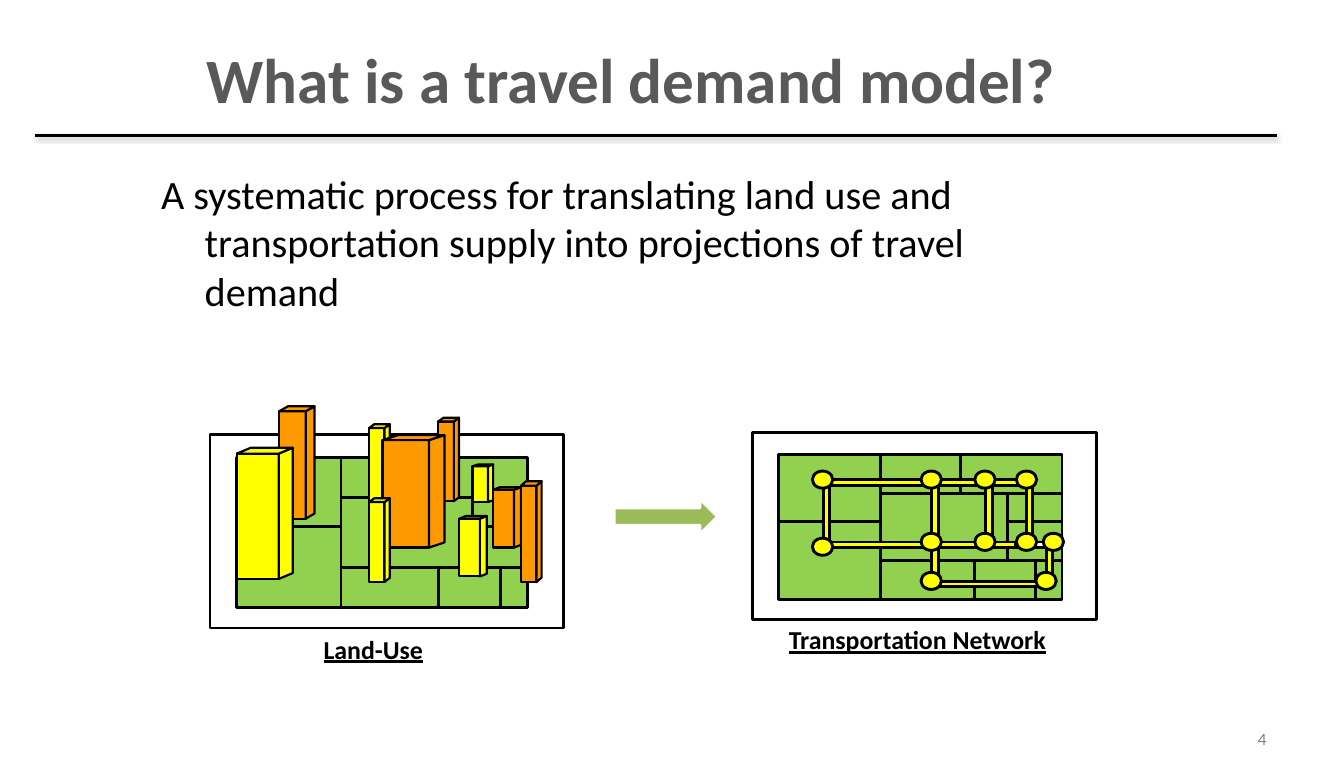
from lxml import etree
from pptx import Presentation
from pptx.dml.color import RGBColor
from pptx.enum.shapes import MSO_CONNECTOR, MSO_SHAPE as SHAPE
from pptx.enum.text import MSO_ANCHOR as ANCHOR, PP_ALIGN as ALIGN
from pptx.oxml import parse_xml
from pptx.oxml.ns import nsdecls, qn
from pptx.util import Cm, Pt

BLACK = RGBColor(0x00, 0x00, 0x00)
WHITE = RGBColor(0xFF, 0xFF, 0xFF)
DARK_GRAY = RGBColor(0x59, 0x59, 0x59)
GRAY = RGBColor(0x80, 0x80, 0x80)
GREEN = RGBColor(0x92, 0xD0, 0x50)
OLIVE = RGBColor(0x9B, 0xBB, 0x59)
YELLOW = RGBColor(0xFF, 0xFF, 0x00)
ORANGE = RGBColor(0xFF, 0x99, 0x00)

TITLE = "What is a travel demand model?"
DEFINITION = ("A systematic process for translating land use and "
              "transportation supply into projections of travel demand")
CAPTIONS = [("Land-Use", 7.7, 15.44, 3.38), ("Transportation Network", 19.13, 15.21, 7.62)]

LAND_FRAME = (5.16, 10.69, 8.69, 4.75)
NETWORK_FRAME = (18.49, 10.64, 8.46, 4.6)
PARCELS = [
    (0.66, 0.56, 3.22, 2.26), (3.22, 0.56, 5.25, 1.55),
    (0.66, 2.26, 3.22, 4.24), (3.22, 1.55, 6.44, 3.25),
    (5.25, 0.56, 7.81, 1.55), (6.44, 1.55, 7.81, 2.26),
    (3.22, 3.25, 5.61, 4.24), (5.61, 3.25, 7.13, 4.24),
    (7.13, 3.25, 7.81, 4.24), (6.44, 2.26, 7.81, 3.25),
]

STREETS = [
    (19.96, 11.86, 3.15, YELLOW), (22.45, 11.86, 1.98, YELLOW),
    (23.95, 11.86, 1.5, YELLOW), (22.81, 13.39, 1.5, YELLOW),
    (23.95, 13.39, 1.5, YELLOW), (22.45, 14.35, 3.66, YELLOW),
    (19.81, 13.39, 3.48, YELLOW),
]
AVENUES = [
    (20.31, 12.62, 2.06), (22.97, 12.62, 2.06), (24.3, 12.62, 2.06),
    (25.29, 12.62, 2.06), (22.97, 13.79, 1.37), (25.79, 13.72, 1.24),
]
LAST_STREET = (24.79, 13.39, 1.17, WHITE)
NODES = [
    (25.63, 13.11), (19.96, 13.23), (22.63, 14.07), (25.45, 14.07),
    (19.96, 11.58), (22.63, 11.58), (22.63, 13.11), (24.97, 11.58),
    (23.95, 11.58), (24.97, 13.11), (23.95, 13.11),
]

BUILDINGS = [
    (11.61, 11.46, 0.38, 0.88, YELLOW), (12.12, 12.04, 0.51, 1.42, ORANGE),
    (9.07, 10.52, 0.38, 1.96, YELLOW), (10.77, 10.36, 0.38, 1.96, ORANGE),
    (9.4, 10.82, 1.14, 2.64, ORANGE), (6.86, 10.11, 0.65, 2.64, ORANGE),
    (5.82, 11.15, 1.03, 3.08, YELLOW), (9.07, 12.34, 0.38, 1.96, YELLOW),
    (11.28, 12.75, 0.51, 1.42, YELLOW), (12.8, 11.94, 0.38, 2.37, ORANGE),
]
DEPTH_RATIO = 1 / 3
RISE_RATIO = 0.047

deck = Presentation()
deck.slide_width, deck.slide_height = Cm(33.02), Cm(19.05)
slide = deck.slides.add_slide(deck.slide_layouts[6])
shapes = slide.shapes


def add_text(text, left, top, width, height, size, color=BLACK, bold=False,
             underline=False, align=ALIGN.LEFT, anchor=ANCHOR.TOP, hanging=None):
    box = shapes.add_textbox(Cm(left), Cm(top), Cm(width), Cm(height))
    frame = box.text_frame
    frame.word_wrap = True
    frame.vertical_anchor = anchor
    paragraph = frame.paragraphs[0]
    paragraph.alignment = align
    if hanging:
        margin, indent = hanging
        properties = paragraph._p.get_or_add_pPr()
        properties.set("marL", str(Cm(margin)))
        properties.set("indent", str(Cm(indent)))
    run = paragraph.add_run()
    run.text = text
    font = run.font
    font.name, font.size, font.bold, font.underline = "Calibri", Pt(size), bold, underline
    font.color.rgb = color


def paint(shape, fill, line, weight):
    shape.shadow.inherit = False
    shape.fill.solid()
    shape.fill.fore_color.rgb = fill
    shape.line.color.rgb = line
    shape.line.width = Pt(weight)


def add_part(kind, left, top, width, height, fill, line=BLACK, weight=2):
    part = shapes.add_shape(kind, Cm(left), Cm(top), Cm(width), Cm(height))
    paint(part, fill, line, weight)
    return part


def add_parcel_map(left, top, width, height):
    add_part(SHAPE.RECTANGLE, left, top, width, height, WHITE)
    scale_x, scale_y = width / LAND_FRAME[2], height / LAND_FRAME[3]
    for x1, y1, x2, y2 in PARCELS:
        add_part(SHAPE.RECTANGLE, left + x1 * scale_x, top + y1 * scale_y,
                 (x2 - x1) * scale_x, (y2 - y1) * scale_y, GREEN)


def add_street(left, middle, length, fill):
    add_part(SHAPE.MATH_MINUS, left, middle - 0.28, length, 0.56, fill)


def add_face(points, fill):
    corners = [(Cm(x), Cm(y)) for x, y in points]
    outline = shapes.build_freeform(*corners[0])
    outline.add_line_segments(corners[1:], close=True)
    paint(outline.convert_to_shape(), fill, BLACK, 1.5)


def add_building(left, top, width, height, fill):
    right, bottom = left + width, top + height
    depth, rise = width * DEPTH_RATIO, height * RISE_RATIO
    add_part(SHAPE.RECTANGLE, left, top, width, height, fill, weight=1.5)
    add_face([(right, bottom), (right + depth, bottom - rise),
              (right + depth, top - rise), (right, top)], fill)
    add_face([(left, top), (right, top),
              (right + depth, top - rise), (left + depth, top - rise)], fill)


def add_title_rule():
    rule = shapes.add_connector(MSO_CONNECTOR.STRAIGHT, Cm(0.86), Cm(3.33), Cm(31.37), Cm(3.33))
    rule.line.color.rgb = BLACK
    rule.line.width = Pt(2)
    effects = etree.SubElement(rule._element.spPr, qn("a:effectLst"))
    effects.append(parse_xml(
        f'<a:outerShdw {nsdecls("a")} blurRad="{Pt(3.1)}" dist="{Pt(1.6)}" dir="5400000" '
        'rotWithShape="0"><a:srgbClr val="000000"><a:alpha val="38000"/></a:srgbClr>'
        '</a:outerShdw>'))


add_text("4", 23.67, 17.65, 7.7, 1.02, 12, color=GRAY, align=ALIGN.RIGHT, anchor=ANCHOR.MIDDLE)
add_text(TITLE, 4.57, 0.86, 21.89, 2.95, 44, color=DARK_GRAY, bold=True, align=ALIGN.CENTER)

add_parcel_map(*NETWORK_FRAME)
for street in STREETS:
    add_street(*street)
for center_x, center_y, length in AVENUES:
    avenue = add_part(SHAPE.MATH_MINUS, center_x - length / 2, center_y - 0.33,
                      length, 0.66, YELLOW)
    avenue.rotation = 90
add_street(*LAST_STREET)
for left, top in NODES:
    add_part(SHAPE.FLOWCHART_CONNECTOR, left, top, 0.5, 0.42, YELLOW)

add_parcel_map(*LAND_FRAME)
for building in BUILDINGS:
    add_building(*building)

for caption, left, top, width in CAPTIONS:
    add_text(caption, left, top, width, 1.8, 18, bold=True, underline=True)
add_part(SHAPE.RIGHT_ARROW, 15.09, 12.27, 2.54, 0.86, OLIVE, line=WHITE)
add_title_rule()
add_text(DEFINITION, 3.61, 4.04, 23.5, 11.1, 28, hanging=(1.17, -1.07))

deck.save("out.pptx")
